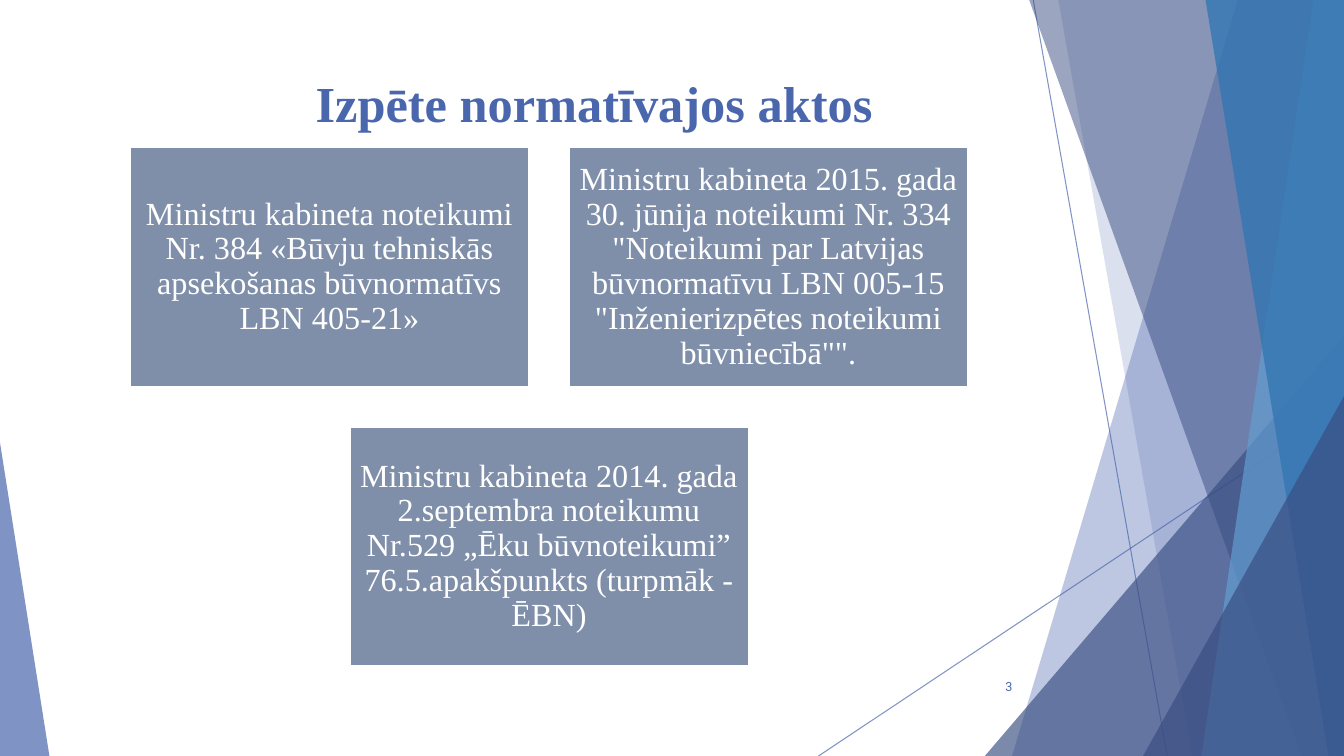
from lxml import etree
from pptx import Presentation
from pptx.dml.color import RGBColor
from pptx.enum.shapes import MSO_CONNECTOR, MSO_SHAPE
from pptx.enum.text import MSO_ANCHOR, MSO_AUTO_SIZE, PP_ALIGN
from pptx.oxml.ns import qn
from pptx.util import Inches, Pt

LINE = MSO_CONNECTOR.STRAIGHT
RECT, TRI = MSO_SHAPE.RECTANGLE, MSO_SHAPE.ISOSCELES_TRIANGLE
TOP, MID = MSO_ANCHOR.TOP, MSO_ANCHOR.MIDDLE
LEFT, MID_X, RIGHT = PP_ALIGN.LEFT, PP_ALIGN.CENTER, PP_ALIGN.RIGHT
FIXED = MSO_AUTO_SIZE.NONE

W, H = Inches(13.333), Inches(7.5)
BLUE, NAVY, SKY, DEEP = "4A66AC", "384C81", "629DD1", "3477B2"
SLATE, WHITE = "7F8FA9", "FFFFFF"
SERIF, SANS = "Times New Roman", "Roboto"

# Bands run from a slanted left edge (top x, bottom x) to the slide's right side.
# Wedges are right triangles: left, top, right, apex side. All in percent.
FACETS = [
    ("band", (92.1, 75.3), BLUE, 36),
    ("band", (78.75, 88.73), BLUE, 20),
    ("wedge", (73.28, 44.4, 100, 1), NAVY, 66),
    ("band", (76.58, 96.83), NAVY, 50),
    ("band", (97.73, 89.4), SKY, 70),
    ("band", (89.7, 98.85), DEEP, 80),
    ("wedge", (85.05, 52.4, 100, 1), NAVY, 66),
    ("wedge", (0, 58.53, 3.68, 0), BLUE, 70),
]
RAYS = [(76.88, 0, 86.85, 100), (100, 53.73, 60.9, 100)]

ACTS = [
    ["Ministru kabineta noteikumi Nr. 384 «Būvju tehniskās apsekošanas "
     "būvnormatīvs LBN 405-21»",
     "Ministru kabineta 2015. gada 30. jūnija noteikumi Nr. 334 \"Noteikumi "
     "par Latvijas būvnormatīvu LBN 005-15 \"Inženierizpētes noteikumi "
     "būvniecībā\"\"."],
    ["Ministru kabineta 2014. gada 2.septembra noteikumu Nr.529 „Ēku "
     "būvnoteikumi” 76.5.apakšpunkts (turpmāk - ĒBN)"],
]


def px(share):
    return round(W * share / 100)


def py(share):
    return round(H * share / 100)


def area(x, y, w, h):
    """Turn percent shares of the slide into a box."""
    return px(x), py(y), px(w), py(h)


def tint(format, color, alpha=100):
    """Set a solid colour on a fill, with opacity in percent."""
    format.solid()
    format.fore_color.rgb = RGBColor.from_string(color)
    if alpha < 100:
        node = format._xPr.find(".//" + qn("a:srgbClr"))
        etree.SubElement(node, qn("a:alpha")).set("val", str(alpha * 1000))


def write(shape, text, size, color, font=SERIF, bold=False, align=LEFT,
          anchor=TOP, space=1.0, inset=None):
    frame = shape.text_frame
    frame.word_wrap = True
    frame.auto_size = FIXED
    frame.vertical_anchor = anchor
    if inset is not None:
        frame.margin_left = frame.margin_right = inset
        frame.margin_top = frame.margin_bottom = inset
    para = frame.paragraphs[0]
    para.text = text
    para.alignment = align
    para.line_spacing = space
    para.font.size = Pt(size)
    para.font.name = font
    para.font.bold = bold
    para.font.color.rgb = RGBColor.from_string(color)


def band(shapes, top, base):
    path = shapes.build_freeform(px(top), 0)
    path.add_line_segments([(W, 0), (W, H), (px(base), H)], close=True)
    return path.convert_to_shape()


def wedge(shapes, left, top, right, apex):
    shape = shapes.add_shape(TRI, *area(left, top, right - left, 100 - top))
    shape.adjustments[0] = apex
    return shape


def backdrop(shapes):
    for x1, y1, x2, y2 in RAYS:
        ray = shapes.add_connector(LINE, px(x1), py(y1), px(x2), py(y2))
        ray.line.width = Pt(0.75)
        tint(ray.line.fill, BLUE, 70)
        etree.SubElement(ray.element.spPr, qn("a:effectLst"))
    make = {"band": band, "wedge": wedge}
    for kind, size, color, alpha in FACETS:
        facet = make[kind](shapes, *size)
        facet.shadow.inherit = False
        facet.line.fill.background()
        tint(facet.fill, color, alpha)


def heading(shapes, box):
    title = shapes.title
    title.left, title.top, title.width, title.height = box
    write(title, "Izpēte normatīvajos aktos", 36, BLUE, bold=True)
    shapes.element.append(title.element)  # bring in front of the backdrop


def number(shapes, box):
    write(shapes.add_textbox(*box), "3", 9, BLUE, font=SANS, align=RIGHT,
          anchor=MID)


def cards(shapes, box):
    """Lay out rows of two cards; a shorter row is centred."""
    x, y, w, _ = box
    wide = round(w / 2.1)
    tall, gap = round(wide * 0.6), round(wide * 0.1)
    for i, row in enumerate(ACTS):
        used = len(row) * (wide + gap) - gap
        for j, text in enumerate(row):
            card = shapes.add_shape(
                RECT, x + (w - used) // 2 + j * (wide + gap),
                y + i * (tall + gap), wide, tall)
            card.shadow.inherit = False
            tint(card.fill, SLATE)
            tint(card.line.fill, WHITE)
            card.line.width = Pt(1.5)
            write(card, text, 23, WHITE, align=MID_X, anchor=MID, space=0.9,
                  inset=Inches(0.1))


def main():
    deck = Presentation()
    deck.slide_width, deck.slide_height = W, H
    slide = deck.slides.add_slide(deck.slide_layouts[5])
    tint(slide.background.fill, WHITE)
    shapes = slide.shapes
    backdrop(shapes)
    heading(shapes, area(22.73, 8.93, 65.7, 19.2))
    number(shapes, area(70.43, 88.13, 5.63, 5.33))
    cards(shapes, area(9.68, 19.47, 62.35, 68.5))
    deck.save("out.pptx")


if __name__ == "__main__":
    main()
